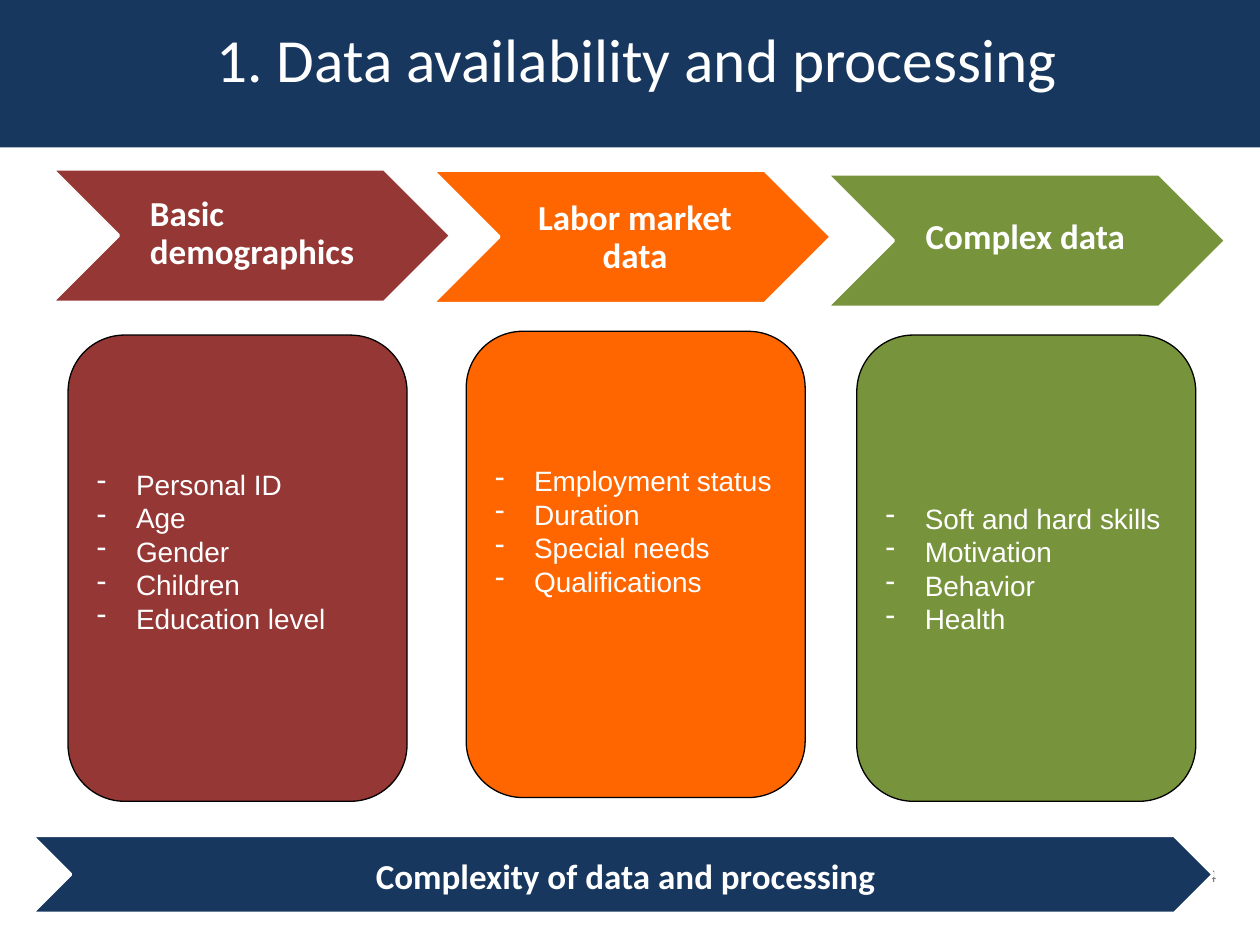
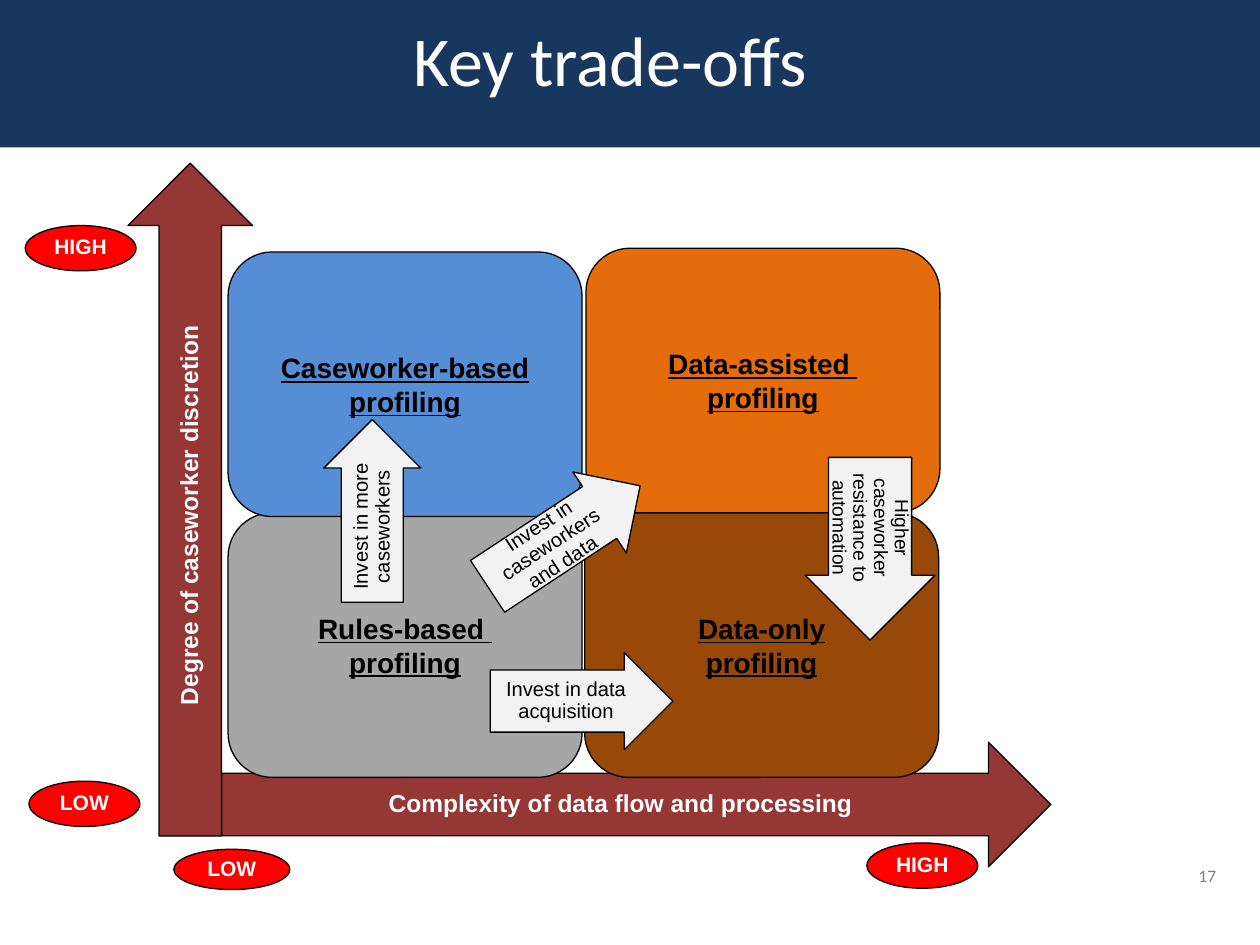
from dataclasses import dataclass
from typing import NamedTuple

from lxml import etree
from pptx import Presentation
from pptx import util as u
from pptx.dml.color import RGBColor
from pptx.enum import shapes as kinds, text as t
from pptx.oxml import ns

EMU_PER_PX = 9144  # 100 px to the inch

NAVY, WHITE, BLACK, GREY = "17375E", "FFFFFF", "000000", "7F7F7F"
MAROON, ORANGE, GREEN, RED, PALE = "953735", "FF6600", "77933C", "FF0000", "F2F2F2"

KIND = kinds.MSO_SHAPE
LEFT, CENTER, RIGHT = t.PP_ALIGN.LEFT, t.PP_ALIGN.CENTER, t.PP_ALIGN.RIGHT
TOP, MIDDLE = t.MSO_ANCHOR.TOP, t.MSO_ANCHOR.MIDDLE


class Box(NamedTuple):
    left: int
    top: int
    width: int
    height: int


class Insets(NamedTuple):
    left: int = 10
    top: int = 5
    right: int = 10
    bottom: int = 5


@dataclass(frozen=True)
class Style:
    size: float
    font: str = "Arial"
    color: str = WHITE
    bold: bool = False
    underline: bool = False
    align: t.PP_ALIGN = CENTER
    spacing: float = 1.0
    bullet: str = ""


@dataclass(frozen=True)
class Stage:
    name: str
    color: str
    chevron: tuple[int, int]
    label_top: int
    label_height: int
    label_inset: int
    align: t.PP_ALIGN
    panel: tuple[int, int]
    panel_bottom_inset: int
    items: tuple[str, ...]


@dataclass(frozen=True)
class Quadrant:
    lines: tuple[str, ...]
    color: str
    left: int
    top: int


@dataclass(frozen=True)
class Move:
    label: str
    box: Box
    rotation: float = 0
    size: float = 11.5


class Level(NamedTuple):
    name: str
    box: Box


PAGE_STYLE = Style(10, "Calibri", GREY, align=RIGHT)
CHEVRON_STYLE = Style(20, "Calibri", bold=True, spacing=0.9)
ITEM_STYLE = Style(16, align=LEFT, bullet="-")
AXIS_STYLE = Style(14, bold=True, spacing=0.9)
QUADRANT_STYLE = Style(16, color=BLACK, bold=True, underline=True)
LEVEL_STYLE = Style(12, bold=True, spacing=0.9)

STAGES = (
    Stage("Basic demographics", MAROON, (41, 134), 140, 91, 15, LEFT, (54, 266), 32,
          ("Personal ID", "Age", "Gender", "Children", "Education level")),
    Stage("Labor market data", ORANGE, (343, 135), 151, 76, 9, CENTER, (370, 263), 58,
          ("Employment status", "Duration", "Special needs", "Qualifications")),
    Stage("Complex data ", GREEN, (656, 138), 151, 76, 9, CENTER, (680, 266), 5,
          ("Soft and hard skills", "Motivation", "Behavior", "Health")),
)

QUADRANTS = (
    Quadrant(("Rules-based ", "profiling"), "A6A6A6", 181, 407),
    Quadrant(("Data-only", "profiling"), "984807", 464, 407),
    Quadrant(("Caseworker-based profiling",), "558ED5", 181, 200),
    Quadrant(("Data-assisted ", "profiling"), "E46C0A", 465, 197),
)

AXES = (
    Move("Degree of caseworker discretion", Box(-116, 347, 534, 99), 270),
    Move("Complexity of data flow and processing", Box(176, 589, 658, 99)),
)

MOVES = (
    Move("Invest in more caseworkers", Box(223, 367, 145, 77), 270),
    Move("Invest in data acquisition", Box(389, 518, 145, 77)),
    Move("Invest in caseworkers and data", Box(375, 387, 145, 77), 326.6),
    Move("Higher caseworker resistance to automation", Box(618, 384, 145, 103), 90, 11),
)

LEVELS = (
    Level("LOW", Box(138, 674, 92, 32)),
    Level("LOW", Box(23, 620, 88, 36)),
    Level("HIGH", Box(20, 179, 88, 36)),
    Level("HIGH", Box(688, 669, 88, 36)),
)


def px(length: int) -> u.Emu:
    return u.Emu(length * EMU_PER_PX)


def rgb(color: str) -> RGBColor:
    return RGBColor.from_string(color)


def add_bullet(paragraph, mark: str) -> None:
    properties = paragraph._p.get_or_add_pPr()
    properties.set("marL", str(px(31)))
    properties.set("indent", str(-px(31)))
    etree.SubElement(properties, ns.qn("a:buChar")).set("char", mark)


def write(shape, lines: tuple[str, ...], style: Style,
          insets: Insets = Insets(), anchor: t.MSO_ANCHOR = MIDDLE) -> None:
    """Fill a shape with one paragraph per line."""
    frame = shape.text_frame
    frame.word_wrap = True
    frame.vertical_anchor = anchor
    frame.margin_left, frame.margin_top, frame.margin_right, frame.margin_bottom = map(px, insets)
    for index, line in enumerate(lines):
        paragraph = frame.add_paragraph() if index else frame.paragraphs[0]
        if style.bullet:
            add_bullet(paragraph, style.bullet)
        paragraph.alignment = style.align
        paragraph.line_spacing = style.spacing
        run = paragraph.add_run()
        run.text = line
        run.font.name = style.font
        run.font.size = u.Pt(style.size)
        run.font.bold = style.bold
        run.font.underline = style.underline
        run.font.color.rgb = rgb(style.color)


def draw(parent, kind: KIND, box: Box, fill: str, line: str = "",
         line_width: float = 0.75, rotation: float = 0):
    shape = parent.shapes.add_shape(kind, *map(px, box))
    shape.shadow.inherit = False
    shape.rotation = rotation
    shape.fill.solid()
    shape.fill.fore_color.rgb = rgb(fill)
    if line:
        shape.line.color.rgb = rgb(line)
        shape.line.width = u.Pt(line_width)
    else:
        shape.line.fill.background()
    return shape


def add_slide(deck, title: str, title_box: Box, title_size: int, page: str):
    """Add a blank slide with the navy band, its title and the page number."""
    slide = deck.slides.add_slide(deck.slide_layouts[6])
    draw(slide, KIND.RECTANGLE, Box(0, 0, 1000, 117), NAVY)
    heading = slide.shapes.add_textbox(*map(px, title_box))
    write(heading, (title,), Style(title_size, "Calibri"), anchor=TOP)
    number = slide.shapes.add_textbox(*map(px, Box(900, 675, 75, 40)))
    write(number, (page,), PAGE_STYLE)
    return slide


def draw_chevron(slide, box: Box, label_box: Box, label: str, color: str,
                 align: t.PP_ALIGN = CENTER, left_inset: int = 9) -> None:
    """Group a chevron with the label that lies on it."""
    group = slide.shapes.add_group_shape()
    draw(group, KIND.CHEVRON, box, color, WHITE, 2)
    caption = draw(group, KIND.RECTANGLE, label_box, color)
    style = Style(CHEVRON_STYLE.size, CHEVRON_STYLE.font, bold=True,
                  align=align, spacing=CHEVRON_STYLE.spacing)
    write(caption, (label,), style, Insets(left_inset, 3, 3, 3))


def draw_stage(slide, stage: Stage) -> None:
    left, top = stage.chevron
    draw_chevron(slide, Box(left, top, 317, 106),
                 Box(left + 63, stage.label_top, 190, stage.label_height),
                 stage.name, stage.color, stage.align, stage.label_inset)
    panel = draw(slide, KIND.ROUNDED_RECTANGLE, Box(*stage.panel, 269, 370), stage.color, BLACK)
    write(panel, stage.items, ITEM_STYLE, Insets(bottom=stage.panel_bottom_inset))


def build_data_slide(deck) -> None:
    slide = add_slide(deck, "1. Data availability and processing ",
                      Box(45, 12, 932, 100), 35, "14")
    draw_chevron(slide, Box(25, 663, 938, 62), Box(212, 673, 563, 48),
                 "Complexity of data and processing", NAVY)
    for stage in STAGES:
        draw_stage(slide, stage)


def build_trade_off_slide(deck) -> None:
    slide = add_slide(deck, "Key trade-offs ", Box(42, 8, 897, 100), 40, "17")
    for axis in AXES:
        arrow = draw(slide, KIND.RIGHT_ARROW, axis.box, MAROON, BLACK, rotation=axis.rotation)
        write(arrow, (axis.label,), AXIS_STYLE)
    for quadrant in QUADRANTS:
        tile = draw(slide, KIND.ROUNDED_RECTANGLE,
                    Box(quadrant.left, quadrant.top, 281, 210), quadrant.color, BLACK)
        write(tile, quadrant.lines, QUADRANT_STYLE)
    for move in MOVES:
        arrow = draw(slide, KIND.RIGHT_ARROW, move.box, PALE, BLACK, rotation=move.rotation)
        arrow.adjustments[0], arrow.adjustments[1] = 0.64, 0.5
        write(arrow, (move.label,), Style(move.size, color=BLACK, spacing=0.9))
    for level in LEVELS:
        badge = draw(slide, KIND.OVAL, level.box, RED, BLACK)
        write(badge, (level.name,), LEVEL_STYLE, Insets(0, 0, 0, 0))


def main() -> None:
    deck = Presentation()
    deck.slide_width, deck.slide_height = px(1000), px(750)
    build_data_slide(deck)
    build_trade_off_slide(deck)
    deck.save("out.pptx")


if __name__ == "__main__":
    main()
